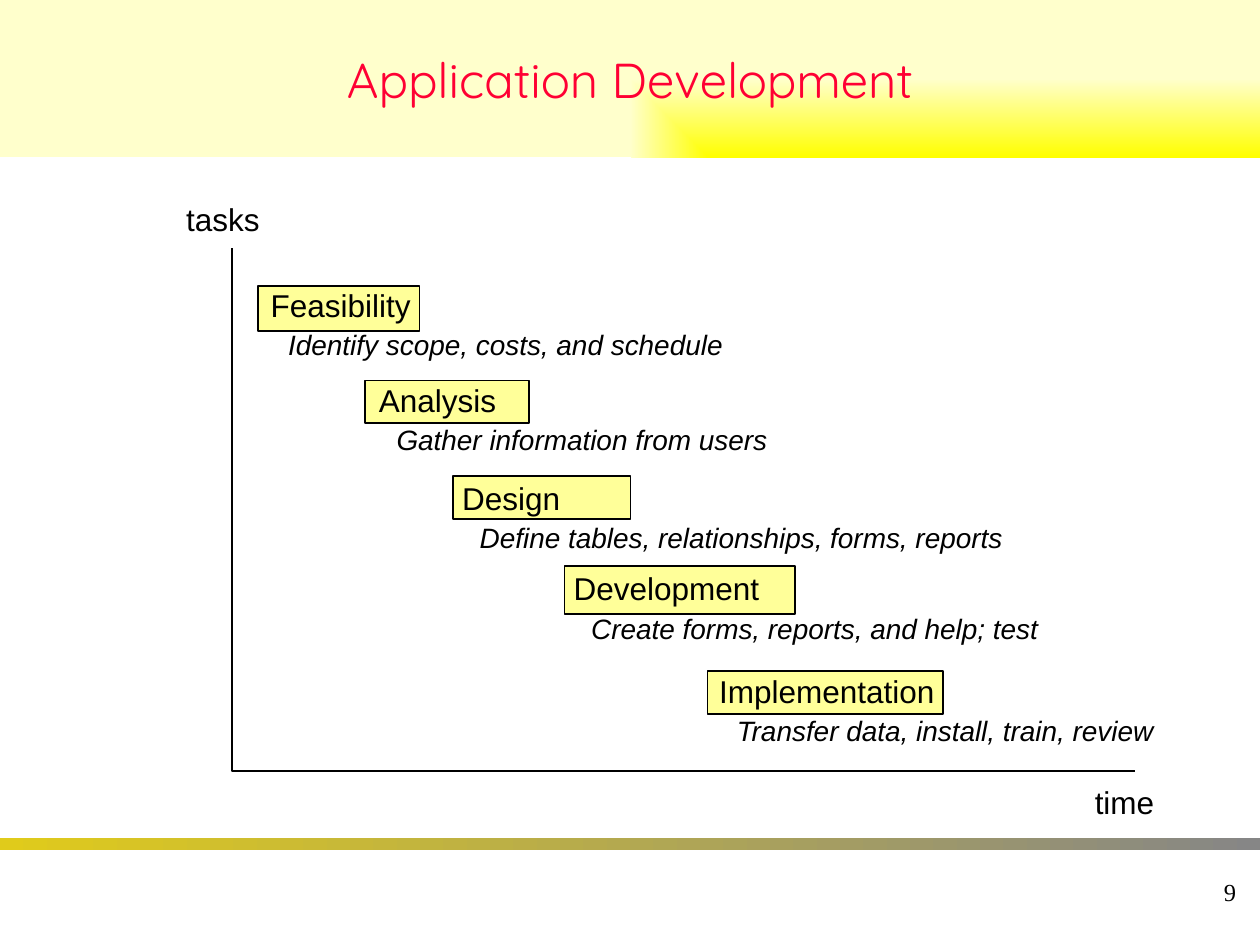
from dataclasses import dataclass

from lxml.etree import SubElement
from pptx import Presentation
from pptx.dml.color import RGBColor
from pptx.enum.shapes import MSO_SHAPE as Shape
from pptx.enum.text import MSO_ANCHOR as Anchor, MSO_AUTO_SIZE as AutoSize, PP_ALIGN as Align
from pptx.oxml.ns import qn
from pptx.util import Inches, Pt

BLACK = RGBColor(0x00, 0x00, 0x00)
RED = RGBColor(0xFF, 0x00, 0x33)
YELLOW = RGBColor(0xFF, 0xFF, 0x00)
CREAM = RGBColor(0xFF, 0xFF, 0xCC)
PALE_YELLOW = RGBColor(0xFF, 0xFF, 0x99)
GOLD = RGBColor(0xE0, 0xCB, 0x1B)
GREY = RGBColor(0x86, 0x86, 0x86)

# The slide is a grid of square cells
COLUMNS, ROWS = 100, 75
CELL = Inches(0.1)

LABEL = {"name": "Arial", "size": Pt(18), "color": BLACK}
DETAIL = {**LABEL, "size": Pt(16), "italic": True}
TITLE = {"name": "Quicksand", "size": Pt(28), "color": RED}
NUMBER = {"name": "Times New Roman", "size": Pt(14), "color": BLACK}


@dataclass
class Area:
    column: float
    row: float
    columns: float
    rows: float

    def lengths(self) -> list[int]:
        return [round(n * CELL) for n in (self.column, self.row, self.columns, self.rows)]


@dataclass
class Phase:
    name: str
    task: str
    bar: Area
    text: Area


PHASES = [
    Phase("Feasibility", "Identify scope, costs, and schedule",
          Area(20.5, 22.7, 12.8, 3.6), Area(20.5, 22.2, 38, 7)),
    Phase("Analysis", "Gather information from users",
          Area(29, 30.2, 13, 3.4), Area(29.1, 29.75, 33, 7)),
    Phase("Design", "Define tables, relationships, forms, reports",
          Area(35.95, 37.8, 14.1, 3.4), Area(35.7, 37.5, 45.1, 7)),
    Phase("Development", "Create forms, reports, and help; test",
          Area(44.8, 44.95, 18.3, 3.8), Area(44.55, 44.7, 39, 7)),
    Phase("Implementation", "Transfer data, install, train, review",
          Area(56.15, 53.25, 18.7, 3.4), Area(56.1, 52.85, 36.8, 7)),
]


def write(para, text: str, style: dict) -> None:
    span = para.add_run()
    span.text = text
    for key, value in style.items():
        if key == "color":
            span.font.color.rgb = value
        else:
            setattr(span.font, key, value)


def add_text(page, area: Area, lines: list[tuple[str, dict]], **frame_format):
    frame = page.shapes.add_textbox(*area.lengths()).text_frame
    settings = {"word_wrap": False, "auto_size": AutoSize.SHAPE_TO_FIT_TEXT, **frame_format}
    for key, value in settings.items():
        setattr(frame, key, value)
    for index, (text, style) in enumerate(lines):
        para = frame.add_paragraph() if index else frame.paragraphs[0]
        write(para, text, style)
    return frame


def add_bar(page, area: Area):
    bar = page.shapes.add_shape(Shape.RECTANGLE, *area.lengths())
    bar.shadow.inherit = False
    return bar


def outline(shape) -> None:
    shape.line.color.rgb = BLACK
    shape.line.width = Pt(1)


def blend(shape, first: RGBColor, last: RGBColor) -> None:
    shape.fill.gradient()
    shape.fill.gradient_angle = 0
    for stop, color in zip(shape.fill.gradient_stops, (first, last)):
        stop.color.rgb = color


def spread_from_corner(shape) -> None:
    """Turn a linear blend into one that starts at the lower right corner."""
    gradient = shape._element.spPr.find(qn("a:gradFill"))
    gradient.remove(gradient.find(qn("a:lin")))
    route = SubElement(gradient, qn("a:path"), {"path": "rect"})
    SubElement(route, qn("a:fillToRect"), {"l": "100000", "t": "100000"})


def add_title(page, text: str) -> None:
    title = page.shapes.title
    sides = ("left", "top", "width", "height")
    for side, length in zip(sides, Area(0, 0, COLUMNS, 12.5).lengths()):
        setattr(title, side, length)
    blend(title, YELLOW, CREAM)
    spread_from_corner(title)
    frame = title.text_frame
    frame.auto_size = AutoSize.NONE
    frame.vertical_anchor = Anchor.MIDDLE
    frame.paragraphs[0].alignment = Align.CENTER
    write(frame.paragraphs[0], text, TITLE)


def add_axes(page) -> None:
    left, top, width, height = Area(18.4, 19.7, 71.7, 41.5).lengths()
    builder = page.shapes.build_freeform(left, top)
    corner, end = (left, top + height), (left + width, top + height)
    builder.add_line_segments([corner, end], close=False)
    axes = builder.convert_to_shape()
    axes.shadow.inherit = False
    axes.fill.background()
    outline(axes)


def add_phase(page, phase: Phase) -> None:
    bar = add_bar(page, phase.bar)
    bar.fill.solid()
    bar.fill.fore_color.rgb = PALE_YELLOW
    outline(bar)
    frame = add_text(page, phase.text, [(phase.name, LABEL), (phase.task, DETAIL)])
    task = frame.paragraphs[1]
    task.space_before = Pt(2.2)
    indent = {"marL": str(Pt(10)), "indent": "0"}
    for key, value in indent.items():
        task._p.get_or_add_pPr().set(key, value)


def main() -> None:
    deck = Presentation()
    deck.slide_width, deck.slide_height = COLUMNS * CELL, ROWS * CELL
    page = deck.slides.add_slide(deck.slide_layouts[5])

    # Title band, footer stripe and page number
    add_title(page, "Application Development")
    stripe = add_bar(page, Area(0, 66.5, COLUMNS, 1))
    blend(stripe, GOLD, GREY)
    stripe.line.fill.background()
    number = add_text(page, Area(78.3, 68.3, 20.8, 5), [("9", NUMBER)],
                      auto_size=AutoSize.NONE, vertical_anchor=Anchor.MIDDLE)
    number.paragraphs[0].alignment = Align.RIGHT

    # Axes with their labels
    add_axes(page)
    add_text(page, Area(13.8, 15.4, 8, 4), [("tasks", LABEL)])
    add_text(page, Area(85.9, 61.65, 6.8, 4), [("time", LABEL)])

    # Project phases
    for phase in PHASES:
        add_phase(page, phase)

    deck.save("out.pptx")


if __name__ == "__main__":
    main()
